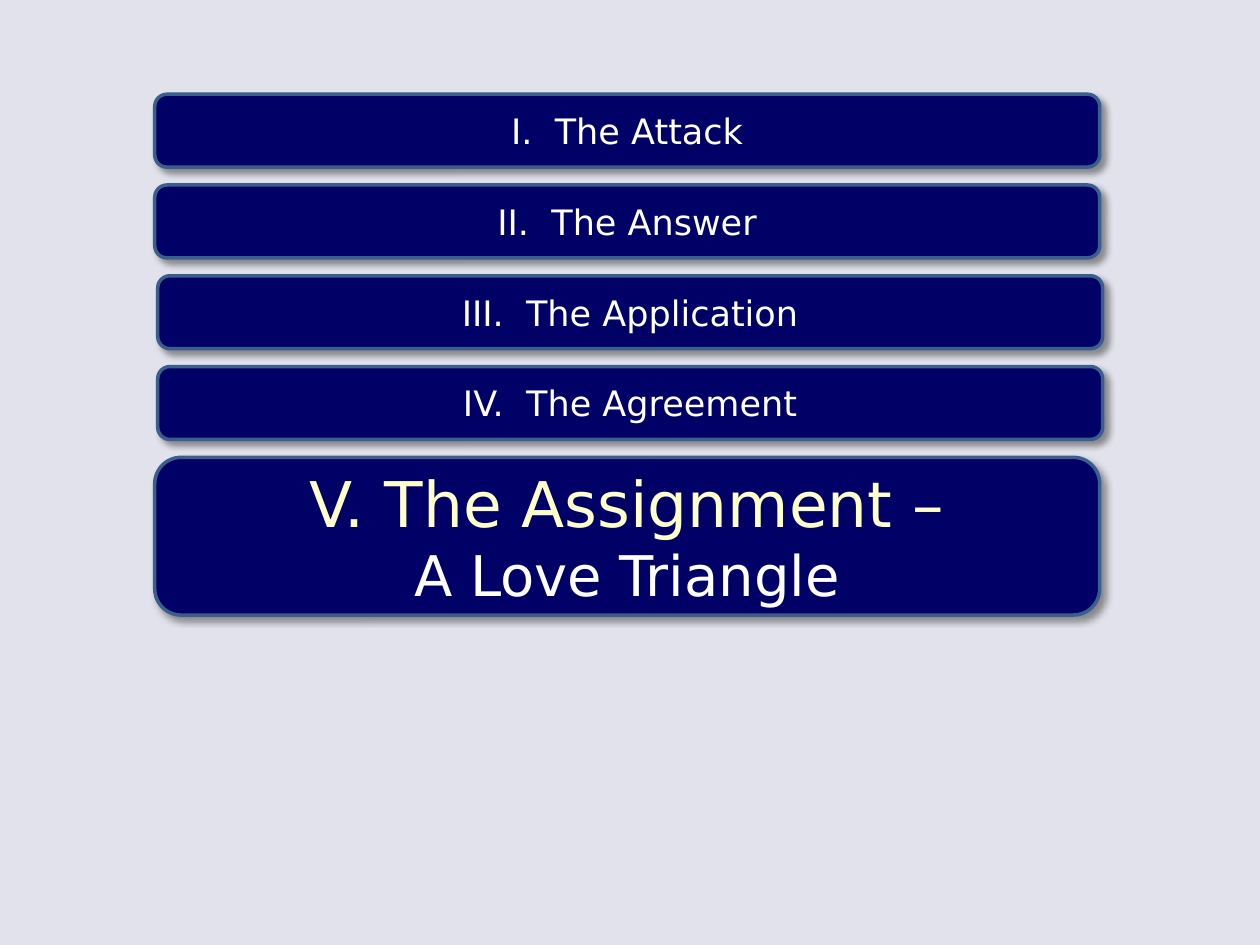
from lxml import etree
from pptx import Presentation
from pptx.dml.color import RGBColor
from pptx.enum import shapes, text
from pptx.oxml.ns import qn
from pptx.util import Cm, Pt

COLORS = {"background": "E2E2EC", "bar": "000066", "outline": "3A5F8C",
          "white": "FFFFFF", "cream": "FFFFCC", "shadow": "000000"}
FONT = "DejaVu Sans"

# Each point: left edge, height (cm), lines of (wording, size, colour)
POINTS = [
    (3.12, 1.47, [("I.  The Attack", 20, "white")]),
    (3.12, 1.47, [("II.  The Answer", 20, "white")]),
    (3.18, 1.47, [("III.  The Application", 20, "white")]),
    (3.18, 1.47, [("IV.  The Agreement", 20, "white")]),
    (3.12, 3.18, [("V. The Assignment –", 36, "cream"),
                  ("A Love Triangle", 32, "white")]),
]
TOP, WIDTH, GAP = 1.9, 19.05, 0.36


def rgb(name):
    return RGBColor.from_string(COLORS[name])


def add_shadow(bar):
    bar.shadow.inherit = False
    effects = bar._element.spPr.find(qn("a:effectLst"))
    outer = etree.SubElement(effects, qn("a:outerShdw"), blurRad=str(Pt(4)),
                             dist=str(Pt(3)), dir=str(45 * 60000),
                             algn="tl", rotWithShape="0")
    color = etree.SubElement(outer, qn("a:srgbClr"), val=COLORS["shadow"])
    etree.SubElement(color, qn("a:alpha"), val="40000")


def add_bar(slide, left, top, height, lines):
    bar = slide.shapes.add_shape(shapes.MSO_SHAPE.ROUNDED_RECTANGLE,
                                 Cm(left), Cm(top), Cm(WIDTH), Cm(height))
    bar.fill.solid()
    bar.fill.fore_color.rgb = rgb("bar")
    bar.line.color.rgb = rgb("outline")
    bar.line.width = Pt(2)
    add_shadow(bar)

    frame = bar.text_frame
    frame.word_wrap = True
    frame.vertical_anchor = text.MSO_ANCHOR.MIDDLE
    paragraph = frame.paragraphs[0]
    paragraph.alignment = text.PP_ALIGN.CENTER
    paragraph.font.name = FONT
    for index, (wording, size, color) in enumerate(lines):
        if index:
            paragraph.add_line_break()
        run = paragraph.add_run()
        run.text = wording
        run.font.name = FONT
        run.font.size = Pt(size)
        run.font.color.rgb = rgb(color)


def main():
    deck = Presentation()
    deck.slide_width, deck.slide_height = Cm(25.4), Cm(19.05)
    slide = deck.slides.add_slide(deck.slide_layouts[6])

    # Background
    slide.background.fill.solid()
    slide.background.fill.fore_color.rgb = rgb("background")

    # Stack of outline points
    top = TOP
    for left, height, lines in POINTS:
        add_bar(slide, left, top, height, lines)
        top += height + GAP

    deck.save("out.pptx")


if __name__ == "__main__":
    main()
